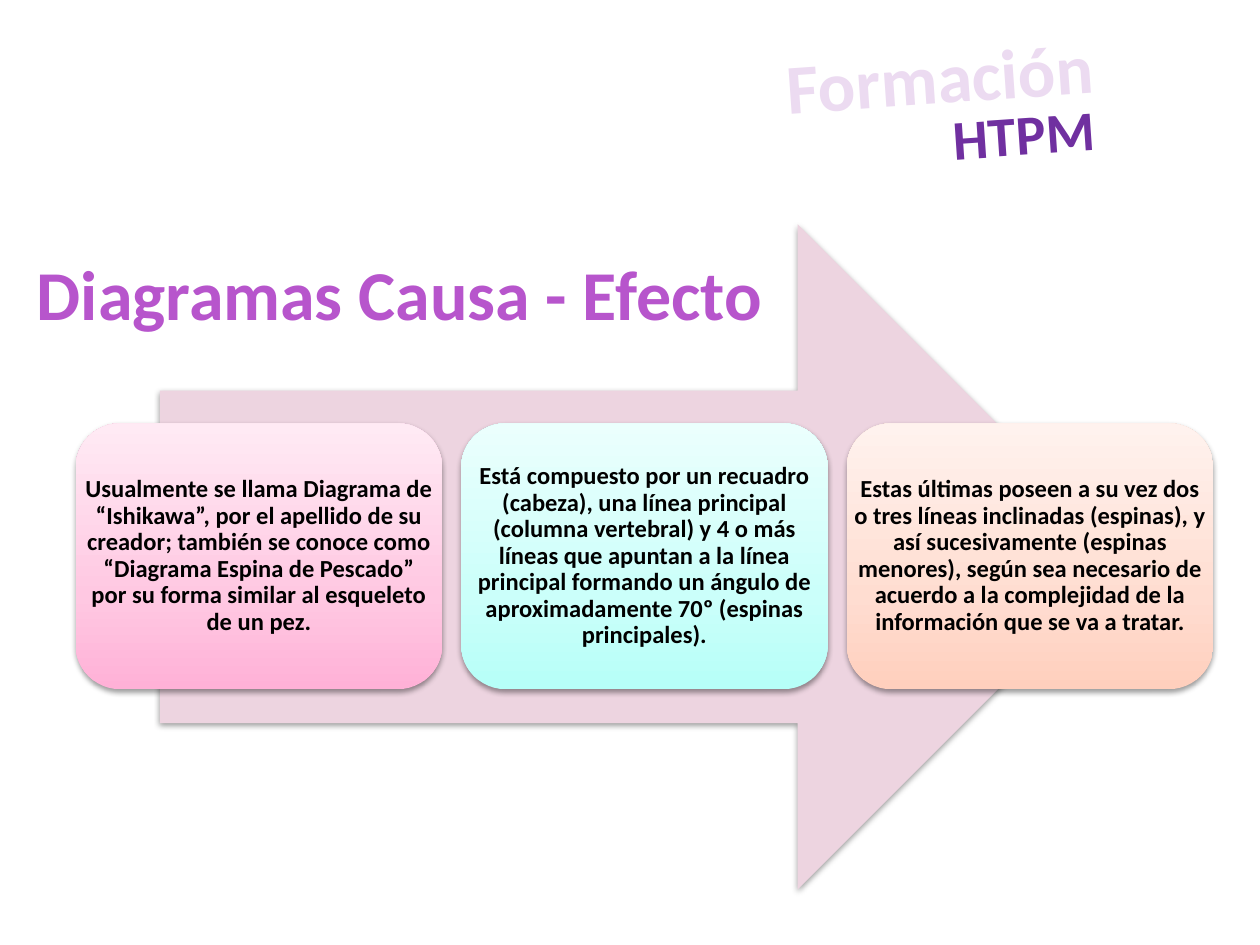
from copy import deepcopy

from lxml.etree import SubElement
from pptx import Presentation
from pptx.dml.color import RGBColor
from pptx.enum.shapes import MSO_SHAPE
from pptx.enum.text import MSO_ANCHOR, PP_ALIGN
from pptx.oxml.ns import qn
from pptx.util import Inches, Pt

BLACK = RGBColor(0x00, 0x00, 0x00)
PURPLE = RGBColor(0x70, 0x30, 0xA0)
LILAC = RGBColor(0xEC, 0xDB, 0xF1)
ORCHID = RGBColor(0xB7, 0x55, 0xCC)
ROSE = RGBColor(0xED, 0xD4, 0xE0)
PINKS = [RGBColor(0xFF, 0xB1, 0xD7), RGBColor(0xFF, 0xC8, 0xE2), RGBColor(0xFF, 0xEA, 0xF4)]
AQUAS = [RGBColor(0xB6, 0xFF, 0xF8), RGBColor(0xCB, 0xFF, 0xFA), RGBColor(0xEB, 0xFF, 0xFD)]
PEACHES = [RGBColor(0xFF, 0xCF, 0xBD), RGBColor(0xFF, 0xDD, 0xD1), RGBColor(0xFF, 0xF2, 0xEE)]
STOPS = [0, 0.35, 1]

LEFT, TOP, WIDTH, HEIGHT, PITCH = 0.6, 3.36, 2.91, 2.11, 3.06

TITLES = [
    ("HTPM", (7.26, 0.74, 1.73, 0.64), 32, PURPLE, 356.1, True),
    ("Formación", (6.13, 0.22, 2.66, 0.77), 40, LILAC, 356, False),
]
HEADING = ("Diagramas Causa - Efecto", (0.16, 1.94, 6.02, 0.77), 40, ORCHID, 0, False)
CARDS = [
    ("Usualmente se llama Diagrama de “Ishikawa”, por el apellido de su creador; "
     "también se conoce como “Diagrama Espina de Pescado” por su forma similar al "
     "esqueleto de un pez.", PINKS),
    ("Está compuesto por un recuadro (cabeza), una línea principal (columna "
     "vertebral) y 4 o más líneas que apuntan a la línea principal formando un "
     "ángulo de aproximadamente 70º (espinas principales).", AQUAS),
    ("Estas últimas poseen a su vez dos o tres líneas inclinadas (espinas), y así "
     "sucesivamente (espinas menores), según sea necesario de acuerdo a la "
     "complejidad de la información que se va a tratar.", PEACHES),
]


def add_text(slide, text, box, size, color, turn=0, wrap=True):
    shape = slide.shapes.add_textbox(*map(Inches, box))
    shape.rotation = turn
    frame = shape.text_frame
    frame.word_wrap = wrap
    para = frame.paragraphs[0]
    para.alignment = PP_ALIGN.CENTER
    run = para.add_run()
    run.text = text
    style = {"name": "Calibri", "size": Pt(size), "bold": True}
    for name, value in style.items():
        setattr(run.font, name, value)
    run.font.color.rgb = color
    return frame


def add_shadow(shape):
    shape.shadow.inherit = False
    effects = shape._element.spPr.find(qn("a:effectLst"))
    shadow = SubElement(effects, qn("a:outerShdw"), blurRad="40000", dist="20000",
                        dir="5400000", rotWithShape="0")
    color = SubElement(shadow, qn("a:srgbClr"), val="000000")
    SubElement(color, qn("a:alpha"), val="38000")


def add_block(slide, kind, box):
    shape = slide.shapes.add_shape(kind, *map(Inches, box))
    shape.line.fill.background()
    add_shadow(shape)
    return shape


def set_blend(shape, colors):
    fill = shape.fill
    fill.gradient()
    fill.gradient_angle = 90
    stops = shape._element.spPr.find(qn("a:gradFill")).find(qn("a:gsLst"))
    stops.append(deepcopy(stops[-1]))
    for stop, color, place in zip(fill.gradient_stops, colors, STOPS):
        stop.color.rgb = color
        stop.position = place


def add_card(slide, index, text, colors):
    box = (LEFT + index * PITCH, TOP, WIDTH, HEIGHT)
    set_blend(add_block(slide, MSO_SHAPE.ROUNDED_RECTANGLE, box), colors)
    frame = add_text(slide, text, box, 14, BLACK)
    frame.vertical_anchor = MSO_ANCHOR.MIDDLE
    frame.paragraphs[0].line_spacing = 0.9
    for side in ("left", "top", "right", "bottom"):
        setattr(frame, f"margin_{side}", Inches(0.06))


def main():
    deck = Presentation()
    deck.slide_width, deck.slide_height = Inches(10), Inches(7.5)
    slide = deck.slides.add_slide(deck.slide_layouts[6])
    for title in TITLES:
        add_text(slide, *title)
    arrow = add_block(slide, MSO_SHAPE.RIGHT_ARROW, (1.27, 1.78, 7.7, 5.28))
    arrow.fill.solid()
    arrow.fill.fore_color.rgb = ROSE
    for index, (text, colors) in enumerate(CARDS):
        add_card(slide, index, text, colors)
    add_text(slide, *HEADING)
    deck.save("out.pptx")


if __name__ == "__main__":
    main()
